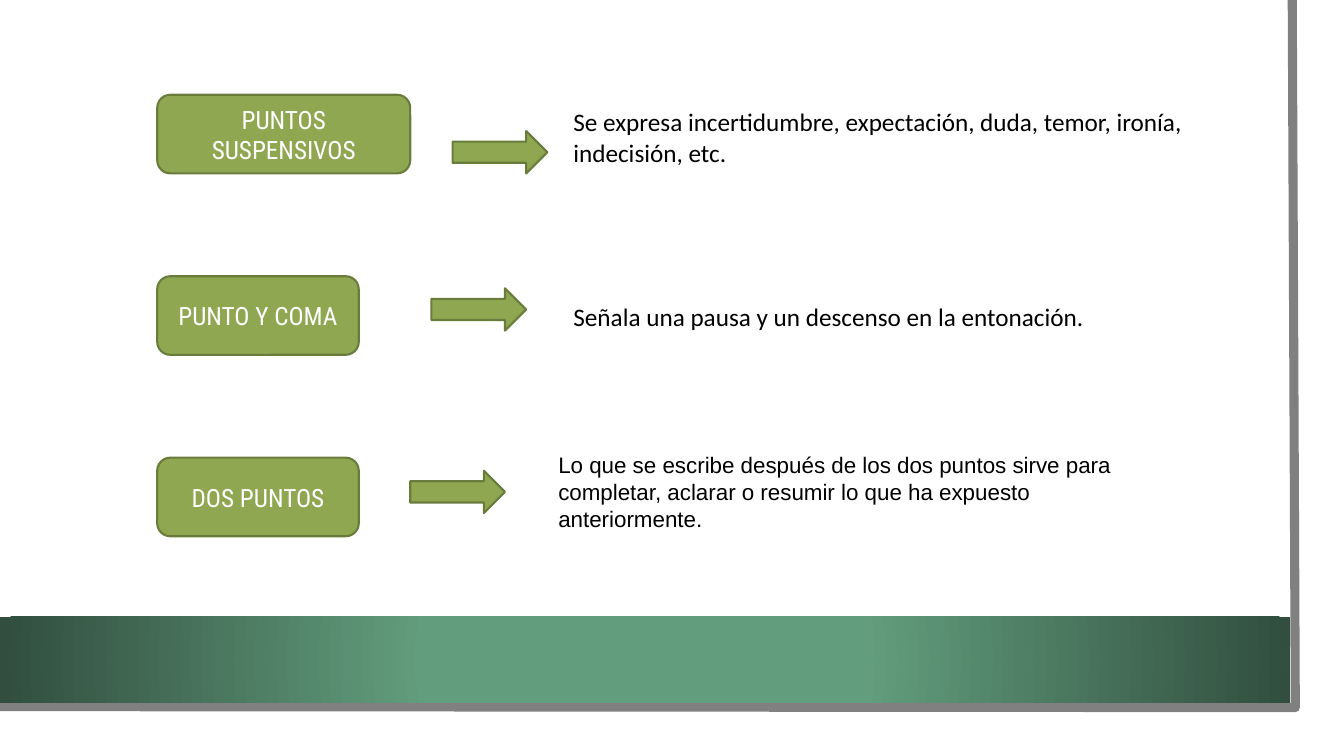
import pptx
import pptx.util
import pptx.dml.color
import pptx.enum.shapes
import pptx.enum.text
import pptx.oxml
import pptx.oxml.ns

RGBColor = pptx.dml.color.RGBColor
MSO_SHAPE = pptx.enum.shapes.MSO_SHAPE
ALIGN = pptx.enum.text.PP_ALIGN
ANCHOR = pptx.enum.text.MSO_ANCHOR

WHITE = RGBColor(0xFF, 0xFF, 0xFF)
BLACK = RGBColor(0x00, 0x00, 0x00)
GRAY = RGBColor(0x80, 0x80, 0x80)
OLIVE = RGBColor(0x8F, 0xA7, 0x51)
DARK_OLIVE = RGBColor(0x6A, 0x7C, 0x3C)
GREEN = RGBColor(0x62, 0x9D, 0x7D)
DARK_GREEN = RGBColor(0x31, 0x4E, 0x3E)

COLUMNS, ROWS = 133.33, 75
ROW_LEFT, FIRST_TOP, ROW_PITCH = 15.6, 9.4, 18
ARROW_OFFSET, ARROW_STEP = 29.3, -2.1

SIGNS = [
    dict(sign="PUNTOS SUSPENSIVOS", sign_width=25.1, arrow_drop=3.6,
         meaning="Se expresa incertidumbre, expectación, duda, temor, ironía, indecisión, etc.",
         meaning_box=(40.3, 0.7, 66.7, 7), size=18, font="Calibri"),
    dict(sign="PUNTO Y COMA", sign_width=20, arrow_drop=1.2,
         meaning="Señala una pausa y un descenso en la entonación.",
         meaning_box=(40.3, 2, 55.5, 4), size=18, font="Calibri"),
    dict(sign="DOS PUNTOS", sign_width=20, arrow_drop=1.3,
         meaning="Lo que se escribe después de los dos puntos sirve para completar, "
                 "aclarar o resumir lo que ha expuesto anteriormente.",
         meaning_box=(38.8, -1.1, 57, 9.1), size=16, font="Arial"),
]


def cells(*counts):
    """Convert counts of tenth-inch grid cells to lengths."""
    return [pptx.util.Inches(count / 10) for count in counts]


def write(frame, text, size=18, font="Calibri", color=BLACK, align=ALIGN.LEFT, anchor=ANCHOR.TOP):
    """Fill a text frame with one formatted paragraph."""
    frame.word_wrap = True
    frame.vertical_anchor = anchor
    paragraph = frame.paragraphs[0]
    paragraph.alignment = align
    run = paragraph.add_run()
    run.text = text
    run.font.size = pptx.util.Pt(size)
    run.font.name = font
    run.font.color.rgb = color


def add_block(slide, kind, box, fill=OLIVE, line=DARK_OLIVE):
    """Add a flat preset shape, outlined unless line is None."""
    block = slide.shapes.add_shape(kind, *cells(*box))
    block.shadow.inherit = False
    block.fill.solid()
    block.fill.fore_color.rgb = fill
    if line is None:
        block.line.fill.background()
    else:
        block.line.color.rgb = line
        block.line.width = pptx.util.Pt(1.5)
    return block


def add_page_frame(slide, left, top, width, height):
    """Draw the sheet, its gray edge and the green band inside the given box."""
    add_block(slide, MSO_SHAPE.RECTANGLE, (left, top, width, height), WHITE, None)

    right, bottom = left + width - 2.5, top + height - 2.5
    corners = [cells(right - 0.3, top), cells(right, bottom), cells(left - 0.3, bottom - 0.1)]
    builder = slide.shapes.build_freeform(*corners[0])
    builder.add_line_segments(corners[1:], close=False)
    edge = builder.convert_to_shape()
    edge.shadow.inherit = False
    edge.fill.background()
    edge.line.color.rgb = GRAY
    edge.line.width = pptx.util.Pt(6.5)

    band = add_block(slide, MSO_SHAPE.RECTANGLE,
                     (left, bottom - 9, width - 3, 8.5), GREEN, None)
    band.fill.gradient()
    for stop, position, color in zip(band.fill.gradient_stops, (0.34, 1), (GREEN, DARK_GREEN)):
        stop.position = position
        stop.color.rgb = color
    gradient = band.fill._xPr.find(pptx.oxml.ns.qn("a:gradFill"))
    gradient.replace(gradient.find(pptx.oxml.ns.qn("a:lin")), pptx.oxml.parse_xml(
        f'<a:path {pptx.oxml.ns.nsdecls("a")} path="circle">'
        '<a:fillToRect l="50000" t="50000" r="50000" b="50000"/></a:path>'))


def add_sign_row(slide, left, top, arrow_offset, sign, sign_width, arrow_drop,
                 meaning, meaning_box, size, font):
    """Place a punctuation sign, its arrow and its meaning from the row's corner."""
    label = add_block(slide, MSO_SHAPE.ROUNDED_RECTANGLE, (left, top, sign_width, 7.8))
    write(label.text_frame, sign, font="Roboto Condensed", color=WHITE,
          align=ALIGN.CENTER, anchor=ANCHOR.MIDDLE)
    add_block(slide, MSO_SHAPE.RIGHT_ARROW, (left + arrow_offset, top + arrow_drop, 9.4, 4.2))
    across, down, width, height = meaning_box
    explanation = slide.shapes.add_textbox(*cells(left + across, top + down, width, height))
    write(explanation.text_frame, meaning, size=size, font=font)


def main():
    """Build and save the slide on punctuation signs."""
    deck = pptx.Presentation()
    deck.slide_width, deck.slide_height = cells(COLUMNS, ROWS)
    slide = deck.slides.add_slide(deck.slide_layouts[6])
    add_page_frame(slide, 0, 0, 131, 72.7)
    for index, entry in enumerate(SIGNS):
        add_sign_row(slide, ROW_LEFT, FIRST_TOP + index * ROW_PITCH,
                     ARROW_OFFSET + index * ARROW_STEP, **entry)
    deck.save("out.pptx")


if __name__ == "__main__":
    main()
